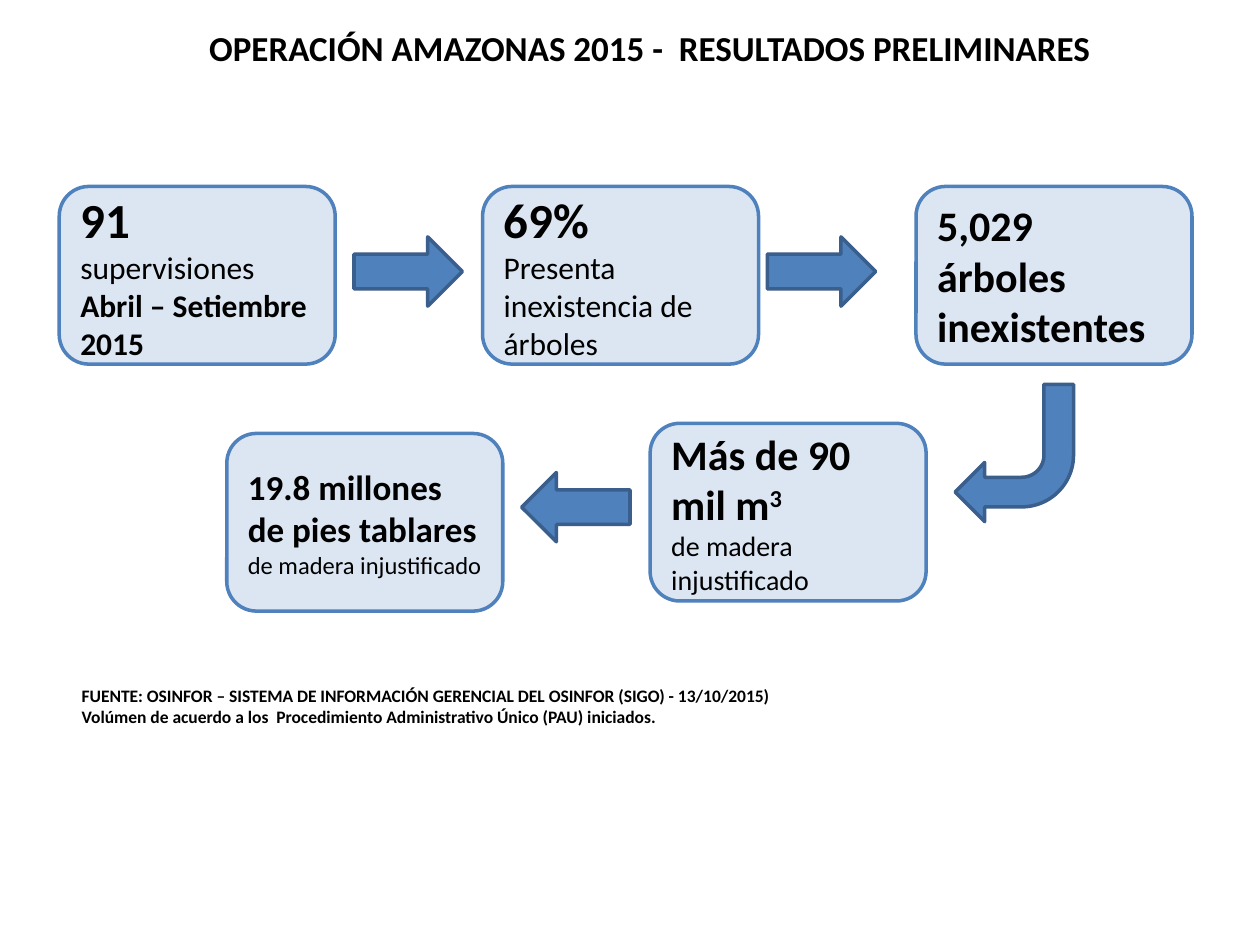
from typing import NamedTuple

from pptx import Presentation
from pptx.dml.color import RGBColor
from pptx.enum.shapes import MSO_SHAPE
from pptx.enum.text import MSO_ANCHOR, MSO_AUTO_SIZE, PP_ALIGN
from pptx.util import Inches, Pt

ROUNDED = MSO_SHAPE.ROUNDED_RECTANGLE
RIGHT_ARROW = MSO_SHAPE.RIGHT_ARROW
BENT_ARROW = MSO_SHAPE.BENT_ARROW
TOP, MIDDLE = MSO_ANCHOR.TOP, MSO_ANCHOR.MIDDLE
LEFT, CENTER = PP_ALIGN.LEFT, PP_ALIGN.CENTER
NO_AUTOFIT = MSO_AUTO_SIZE.NONE

BLACK = RGBColor(0x00, 0x00, 0x00)
PALE_BLUE = RGBColor(0xDC, 0xE6, 0xF2)
BLUE = RGBColor(0x4F, 0x81, 0xBD)
DARK_BLUE = RGBColor(0x3A, 0x5F, 0x8C)

TITLE_ONLY = 5
BOX_W, BOX_H = 2.19, 1.41
ARROW_W, ARROW_H = 0.86, 0.55
TOP_ROW, TOP_ARROWS = 1.48, 1.88


class Run(NamedTuple):
    text: str
    size: int
    bold: bool = True
    superscript: bool = False


class Box(NamedTuple):
    left: float
    top: float
    paragraphs: list[list[Run]]


class Arrow(NamedTuple):
    left: float
    top: float
    width: float = ARROW_W
    height: float = ARROW_H
    kind: int = RIGHT_ARROW
    rotation: int = 0


BOXES = [
    Box(0.47, TOP_ROW, [
        [Run("91", 28)],
        [Run("supervisiones", 18, False)],
        [Run("Abril – Setiembre 2015", 18)],
    ]),
    Box(3.83, TOP_ROW, [
        [Run("69%", 28)],
        [Run("Presenta inexistencia de árboles", 18, False)],
    ]),
    Box(7.27, TOP_ROW, [[Run("5,029 árboles inexistentes", 24)]]),
    Box(5.16, 3.36, [
        [Run("Más de 90 mil m", 24), Run("3", 24, superscript=True)],
        [Run("de madera injustificado", 16, False)],
    ]),
    Box(1.8, 3.44, [
        [Run("19.8 millones de pies tablares", 20)],
        [Run("de madera injustificado", 14, False)],
    ]),
]

ARROWS = [
    Arrow(2.81, TOP_ARROWS),
    Arrow(6.09, TOP_ARROWS),
    Arrow(7.58, 3.05, 0.94, 1.09, BENT_ARROW, 180),
    Arrow(4.14, 3.75, rotation=180),
]

TITLE = [[Run("OPERACIÓN AMAZONAS 2015 -  RESULTADOS PRELIMINARES", 20)]]
SOURCE = [
    [Run("FUENTE: OSINFOR – SISTEMA DE INFORMACIÓN GERENCIAL DEL OSINFOR (SIGO) - 13/10/2015)", 10)],
    [Run("Volúmen de acuerdo a los  Procedimiento Administrativo Único (PAU) iniciados.", 10)],
]


def write(sp, paragraphs: list[list[Run]], anchor=TOP, align=LEFT) -> None:
    tf = sp.text_frame
    frame_format = {"word_wrap": True, "auto_size": NO_AUTOFIT, "vertical_anchor": anchor}
    for name, value in frame_format.items():
        setattr(tf, name, value)
    for i, runs in enumerate(paragraphs):
        p = tf.add_paragraph() if i else tf.paragraphs[0]
        p.alignment = align
        for run in runs:
            r = p.add_run()
            r.text = run.text
            font_format = {"name": "Calibri", "size": Pt(run.size), "bold": run.bold}
            for name, value in font_format.items():
                setattr(r.font, name, value)
            r.font.color.rgb = BLACK
            if run.superscript:
                r._r.get_or_add_rPr().set("baseline", "30000")


def add_filled(slide, kind: int, left: float, top: float, width: float, height: float,
               fill: RGBColor, line: RGBColor):
    sp = slide.shapes.add_shape(kind, Inches(left), Inches(top), Inches(width), Inches(height))
    sp.shadow.inherit = False
    sp.fill.solid()
    sp.fill.fore_color.rgb = fill
    sp.line.color.rgb = line
    sp.line.width = Pt(2)
    return sp


def add_box(slide, box: Box) -> None:
    sp = add_filled(slide, ROUNDED, box.left, box.top, BOX_W, BOX_H, PALE_BLUE, BLUE)
    write(sp, box.paragraphs, MIDDLE)


def add_arrow(slide, arrow: Arrow) -> None:
    sp = add_filled(slide, arrow.kind, arrow.left, arrow.top, arrow.width, arrow.height,
                    BLUE, DARK_BLUE)
    sp.rotation = arrow.rotation


def main() -> None:
    prs = Presentation()
    prs.slide_width, prs.slide_height = Inches(10), Inches(7.5)
    slide = prs.slides.add_slide(prs.slide_layouts[TITLE_ONLY])

    title = slide.shapes.title
    position = {"left": 1.02, "top": 0.16, "width": 8.28, "height": 0.77}
    for name, value in position.items():
        setattr(title, name, Inches(value))
    write(title, TITLE, align=CENTER)

    for box in BOXES:
        add_box(slide, box)
    for arrow in ARROWS:
        add_arrow(slide, arrow)

    source = slide.shapes.add_textbox(Inches(0.55), Inches(5.39), Inches(6.88), Inches(0.44))
    write(source, SOURCE)

    prs.save("out.pptx")


if __name__ == "__main__":
    main()
